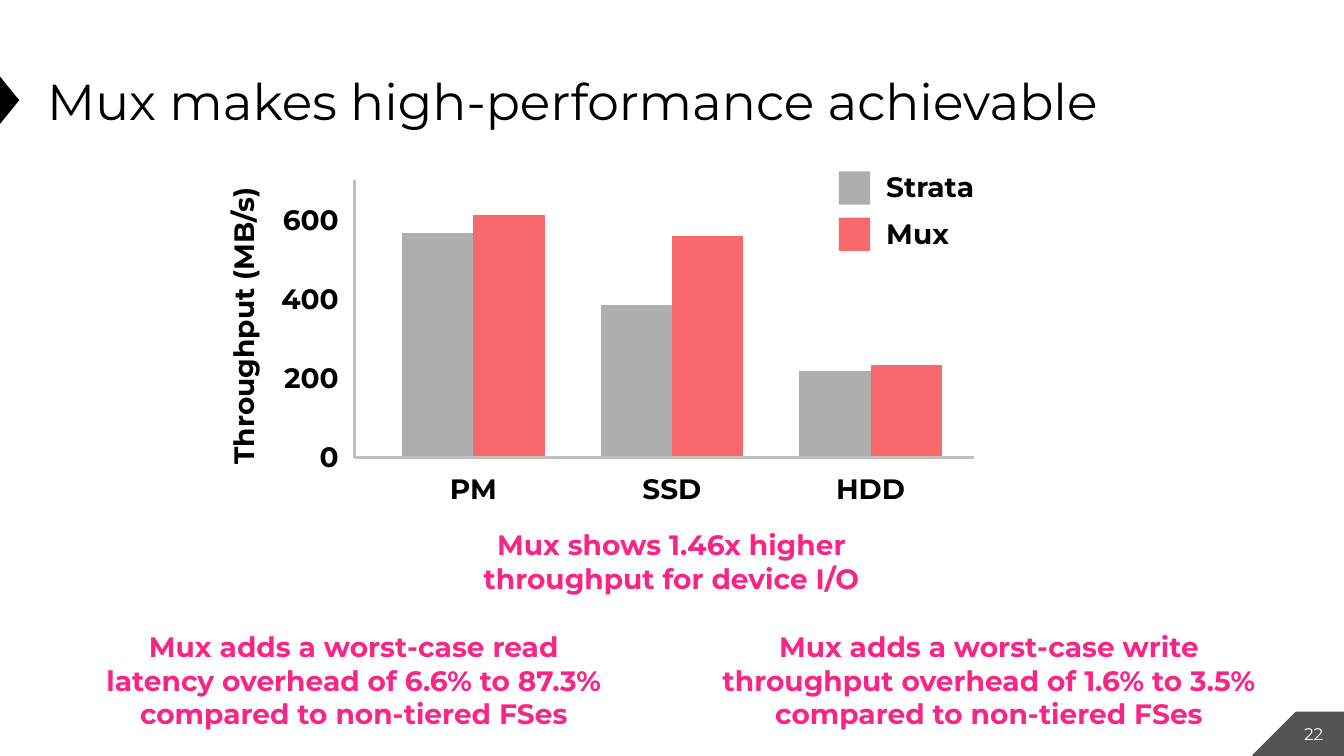
from dataclasses import dataclass

from lxml.etree import SubElement
from pptx import Presentation
from pptx.chart.data import CategoryChartData
from pptx.dml.color import RGBColor
from pptx.enum.chart import XL_CHART_TYPE
from pptx.enum.shapes import MSO_CONNECTOR, MSO_SHAPE
from pptx.enum.text import MSO_ANCHOR, PP_ALIGN
from pptx.oxml import parse_xml
from pptx.oxml.ns import nsdecls, qn
from pptx.util import Inches, Pt

FONT = "Montserrat"
BLACK, WHITE, PINK, AXIS_GREY = "000000", "FFFFFF", "F72585", "BFBFBF"

# Chart data and scale
CATEGORIES = ["PM", "SSD", "HDD"]
AXIS_MAXIMUM, TICK_STEP = 700, 200
AXIS_LEFT, AXIS_RIGHT, AXIS_TOP, AXIS_BOTTOM = 3.52, 9.66, 1.79, 4.54
PLOT_LEFT, PLOT_WIDTH = 3.71, 5.91
LABEL_HEIGHT = 0.31
FINDING_WIDTH = 5.8


@dataclass
class Series:
    name: str
    color: str
    values: tuple[int, ...]


@dataclass
class Label:
    lines: list[str]
    left: float
    top: float
    width: float
    height: float = LABEL_HEIGHT
    size: int = 20
    color: str = BLACK
    bold: bool = True
    align: PP_ALIGN = PP_ALIGN.CENTER
    anchor: MSO_ANCHOR = MSO_ANCHOR.BOTTOM
    rotation: int = 0
    padded: bool = False


@dataclass
class Block:
    kind: MSO_SHAPE
    left: float
    top: float
    width: float
    height: float
    color: str
    rotation: int = 0
    opacity: int = 100


SERIES = [
    Series("Strata", "AEAEAE", (567, 384, 218)),
    Series("Mux", "F8696B", (612, 560, 234)),
]


def rgb(color: str) -> RGBColor:
    return RGBColor.from_string(color)


def draw_block(page, block: Block) -> None:
    shape = page.shapes.add_shape(
        block.kind, Inches(block.left), Inches(block.top),
        Inches(block.width), Inches(block.height))
    shape.shadow.inherit = False
    shape.rotation = block.rotation
    shape.fill.solid()
    shape.fill.fore_color.rgb = rgb(block.color)
    shape.line.fill.background()
    if block.opacity < 100:
        color_node = shape._element.spPr.find(qn("a:solidFill"))[0]
        SubElement(color_node, qn("a:alpha"), val=str(block.opacity * 1000))


def draw_label(page, label: Label) -> None:
    box = page.shapes.add_textbox(
        Inches(label.left), Inches(label.top),
        Inches(label.width), Inches(label.height))
    box.rotation = label.rotation
    frame = box.text_frame
    frame.word_wrap = label.padded
    frame.vertical_anchor = label.anchor
    if not label.padded:
        frame.margin_left = frame.margin_right = 0
        frame.margin_top = frame.margin_bottom = 0
    for index, line in enumerate(label.lines):
        para = frame.add_paragraph() if index else frame.paragraphs[0]
        para.alignment = label.align
        span = para.add_run()
        span.text = line
        span.font.name = FONT
        span.font.size = Pt(label.size)
        span.font.bold = label.bold
        span.font.color.rgb = rgb(label.color)


def draw_axis(page, start: tuple[float, float], end: tuple[float, float]) -> None:
    line = page.shapes.add_connector(
        MSO_CONNECTOR.STRAIGHT, *(Inches(value) for value in start + end))
    line.line.color.rgb = rgb(AXIS_GREY)
    line.line.width = Pt(2)
    SubElement(line._element.spPr, qn("a:effectLst"))


def draw_bars(page) -> None:
    data = CategoryChartData()
    data.categories = CATEGORIES
    for series in SERIES:
        data.add_series(series.name, series.values)
    chart = page.shapes.add_chart(
        XL_CHART_TYPE.COLUMN_CLUSTERED, Inches(PLOT_LEFT), Inches(AXIS_TOP),
        Inches(PLOT_WIDTH), Inches(AXIS_BOTTOM - AXIS_TOP), data).chart
    chart.has_title = False
    chart.has_legend = False
    chart.font.name = FONT
    chart.font.size = Pt(20)
    chart.font.color.rgb = rgb(BLACK)
    scale = chart.value_axis
    scale.minimum_scale, scale.maximum_scale = 0, AXIS_MAXIMUM
    scale.major_unit = TICK_STEP
    scale.has_major_gridlines = False
    scale.visible = chart.category_axis.visible = False
    plot = chart.plots[0]
    plot.gap_width, plot.overlap = 78, 0
    plot.vary_by_categories = False
    for drawn, series in zip(plot.series, SERIES):
        drawn.format.fill.solid()
        drawn.format.fill.fore_color.rgb = rgb(series.color)

    # Let the plot fill the whole chart frame
    area = chart._chartSpace.find(".//" + qn("c:plotArea"))
    for layout in area.findall(qn("c:layout")):
        area.remove(layout)
    area.insert(0, parse_xml(
        f'<c:layout {nsdecls("c")}><c:manualLayout><c:layoutTarget val="inner"/>'
        '<c:xMode val="edge"/><c:yMode val="edge"/><c:x val="0"/><c:y val="0"/>'
        '<c:w val="1"/><c:h val="1"/></c:manualLayout></c:layout>'))


def draw_chart(page) -> None:
    draw_bars(page)
    pitch = PLOT_WIDTH / len(CATEGORIES)
    for index, category in enumerate(CATEGORIES):
        center = PLOT_LEFT + pitch * (index + 0.5)
        draw_label(page, Label([category], center - 0.47, 4.7, 0.94))
    for tick in range(0, AXIS_MAXIMUM, TICK_STEP):
        middle = AXIS_BOTTOM - (AXIS_BOTTOM - AXIS_TOP) * tick / AXIS_MAXIMUM
        draw_label(page, Label([str(tick)], 2.57, middle - LABEL_HEIGHT / 2, 0.79,
                               align=PP_ALIGN.RIGHT))
    draw_label(page, Label(["Throughput (MB/s)"], 1.04, 3.08, 2.76, rotation=270))
    origin = (AXIS_LEFT, AXIS_BOTTOM)
    draw_axis(page, (AXIS_LEFT, AXIS_TOP), origin)
    draw_axis(page, origin, (AXIS_RIGHT, AXIS_BOTTOM))

    # Legend
    for index, series in enumerate(SERIES):
        top = 1.7 + 0.46 * index
        draw_block(page, Block(MSO_SHAPE.RECTANGLE, 8.32, top, 0.31, 0.33, series.color))
        draw_label(page, Label([series.name], 8.79, top + 0.01, 0.94, align=PP_ALIGN.LEFT))


def main() -> None:
    deck = Presentation()
    deck.slide_width, deck.slide_height = Inches(13.33), Inches(7.5)
    page = deck.slides.add_slide(deck.slide_layouts[6])

    # Corner tab and title marker
    for block in (
        Block(MSO_SHAPE.RECTANGLE, 12.42, 7.06, 0.92, 0.44, BLACK, opacity=67),
        Block(MSO_SHAPE.RIGHT_TRIANGLE, 12.4, 7.04, 0.47, 0.47, WHITE, rotation=90),
        Block(MSO_SHAPE.ISOSCELES_TRIANGLE, -0.14, 0.9, 0.47, 0.19, BLACK, rotation=90),
    ):
        draw_block(page, block)

    # Title and page number
    draw_label(page, Label(["Mux makes high-performance achievable"], 0.37, 0.6, 12.6, 0.79,
                           36, bold=False, align=PP_ALIGN.LEFT,
                           anchor=MSO_ANCHOR.MIDDLE, padded=True))
    draw_label(page, Label(["22"], 12.73, 7.06, 0.6, 0.44, 12, WHITE, bold=False,
                           anchor=MSO_ANCHOR.MIDDLE, padded=True))

    # Findings
    for center, top, lines in (
        (6.66, 5.17, ["Mux shows 1.46x higher", "throughput for device I/O"]),
        (3.51, 6.35, ["Mux adds a worst-case read", "latency overhead of 6.6% to 87.3%",
                      "compared to non-tiered FSes"]),
        (9.81, 6.35, ["Mux adds a worst-case write", "throughput overhead of 1.6% to 3.5%",
                      "compared to non-tiered FSes"]),
    ):
        draw_label(page, Label(lines, center - FINDING_WIDTH / 2, top, FINDING_WIDTH, 0.79,
                               color=PINK, anchor=MSO_ANCHOR.MIDDLE))

    draw_chart(page)
    deck.save("out.pptx")


if __name__ == "__main__":
    main()
